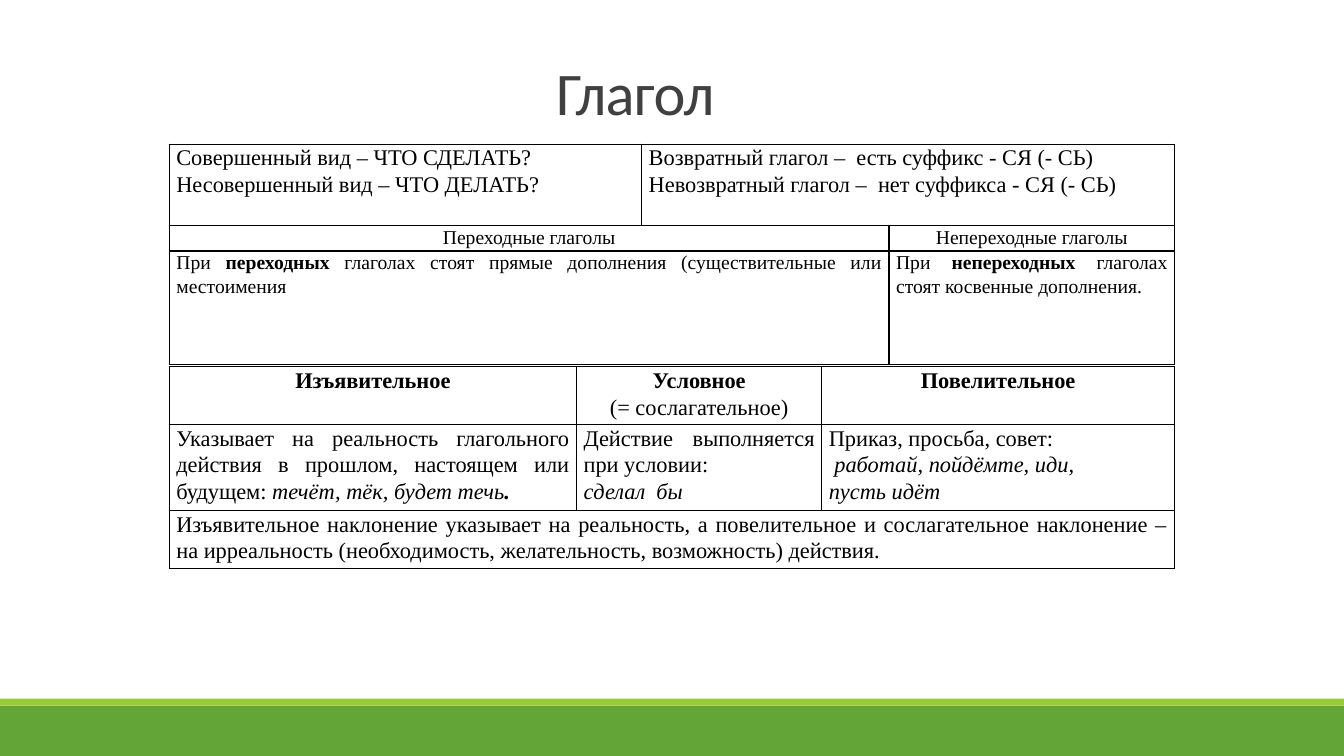
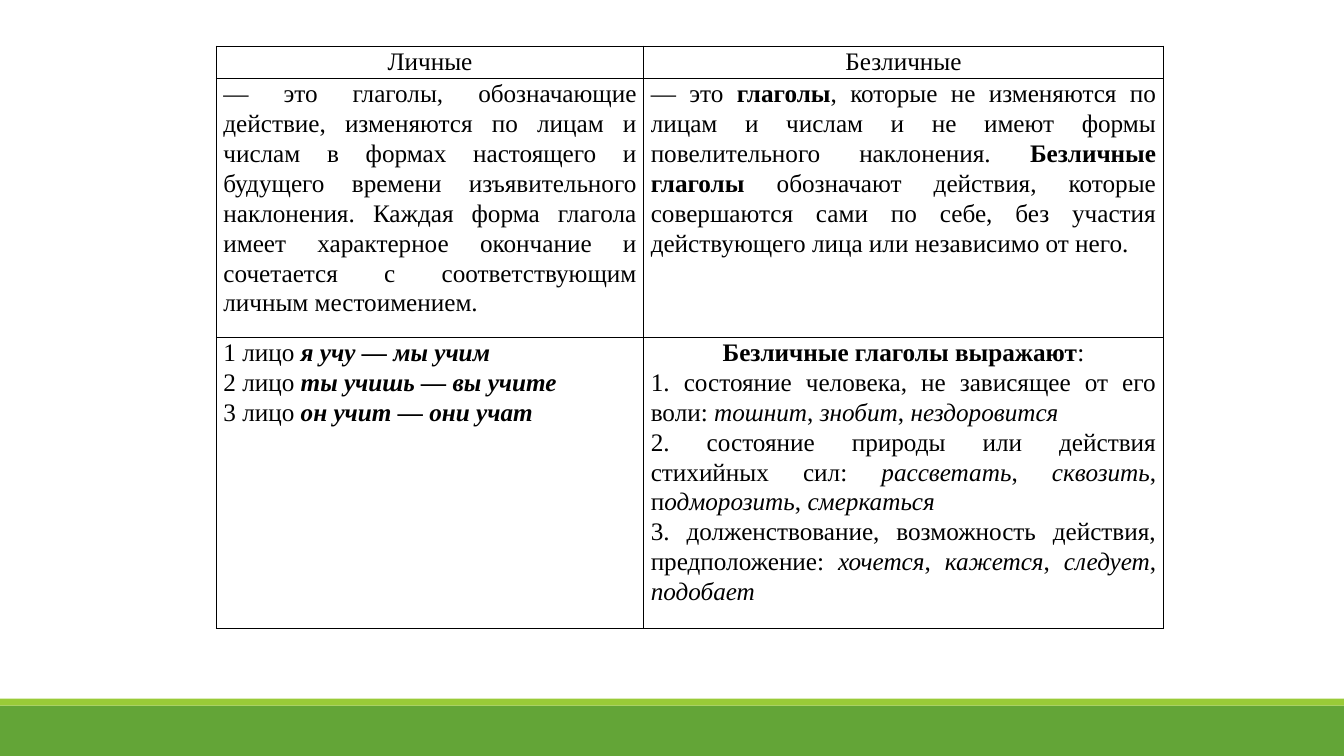
from lxml import etree
from pptx import Presentation
from pptx.dml.color import RGBColor
from pptx.enum.shapes import MSO_SHAPE
from pptx.enum.text import MSO_ANCHOR, PP_ALIGN
from pptx.oxml.ns import qn
from pptx.util import Emu, Inches, Pt

RECTANGLE = MSO_SHAPE.RECTANGLE
CENTER, JUSTIFY = PP_ALIGN.CENTER, PP_ALIGN.JUSTIFY
BOTTOM = MSO_ANCHOR.BOTTOM

COLORS = {"band": "63A537", "stripe": "99CB38", "title": "404040", "ink": "000000"}
TITLE_FONT, TABLE_FONT = "Calibri", "Times New Roman"
WIDTH, HEIGHT = Inches(13.333), Inches(7.5)
BLANK_LAYOUT = 6
LEFT = 12.6  # shared left edge of the tables on the first slide


# Lengths are percentages of the slide's width (across) or height (down)
def across(share):
    return Emu(round(WIDTH * share / 100))


def down(share):
    return Emu(round(HEIGHT * share / 100))


def color(name):
    return RGBColor.from_string(COLORS[name])


# Text: a cell is a list of paragraphs, a paragraph is an alignment and its runs
def bold(text):
    return text, "b"


def italic(text):
    return text, "i"


def bold_italic(text):
    return text, "bi"


def justified(*runs):
    return JUSTIFY, runs


def centered(*runs):
    return CENTER, runs


def listed(lead, *examples):
    """Justified paragraph: a plain lead, then italic examples with commas."""
    runs = [lead]
    for example in examples:
        runs += [italic(example), ", "]
    return justified(*runs[:-1])


def add_run(paragraph, text, font, size, ink, style=""):
    run = paragraph.add_run()
    run.text = text
    run.font.name, run.font.size = font, Pt(size)
    run.font.color.rgb = color(ink)
    run.font.bold, run.font.italic = "b" in style, "i" in style
    return run


def write_cell(cell, paragraphs, size):
    frame = cell.text_frame
    for number, (alignment, runs) in enumerate(paragraphs):
        paragraph = frame.add_paragraph() if number else frame.paragraphs[0]
        paragraph.alignment, paragraph.line_spacing = alignment, 1.07
        for run in runs:
            text, style = (run, "") if isinstance(run, str) else run
            add_run(paragraph, text, TABLE_FONT, size, "ink", style)


# Tables
def format_cell(cell):
    cell.margin_left = cell.margin_right = Inches(0.07)
    cell.margin_top = cell.margin_bottom = 0
    properties = cell._tc.get_or_add_tcPr()
    for side in ("lnL", "lnR", "lnT", "lnB"):
        border = etree.SubElement(properties, qn(f"a:{side}"), w=str(Pt(1)))
        fill = etree.SubElement(border, qn("a:solidFill"))
        etree.SubElement(fill, qn("a:srgbClr"), val=COLORS["ink"])
    cell.fill.background()


def add_grid(slide, left, top, columns, rows, size, content):
    """Add a bordered table; the last cell of a short row spans the rest."""
    table = slide.shapes.add_table(
        len(rows), len(columns), across(left), down(top),
        across(sum(columns)), down(sum(rows))).table
    table.first_row = table.horz_banding = False
    for column, share in zip(table.columns, columns):
        column.width = across(share)
    for row, share in zip(table.rows, rows):
        row.height = down(share)
    for cell in table.iter_cells():
        format_cell(cell)
    for r, row_content in enumerate(content):
        last = len(row_content) - 1
        if last < len(columns) - 1:
            table.cell(r, last).merge(table.cell(r, len(columns) - 1))
        for c, paragraphs in enumerate(row_content):
            write_cell(table.cell(r, c), paragraphs, size)


# Shared slide parts
def add_band(slide, top, height, fill):
    band = slide.shapes.add_shape(RECTANGLE, 0, down(top), WIDTH, down(height))
    band.shadow.inherit = False
    band.fill.solid()
    band.fill.fore_color.rgb = color(fill)
    band.line.fill.background()


def add_slide(deck):
    slide = deck.slides.add_slide(deck.slide_layouts[BLANK_LAYOUT])
    add_band(slide, 93.33, 6.67, "band")
    add_band(slide, 92.4, 0.93, "stripe")
    return slide


def add_title(slide, text):
    frame = slide.shapes.add_textbox(
        across(40.65), down(8.93), across(16.6), down(8.67)).text_frame
    frame.word_wrap, frame.vertical_anchor = True, BOTTOM
    paragraph = frame.paragraphs[0]
    paragraph.line_spacing = 0.85
    run = add_run(paragraph, text, TITLE_FONT, 43.2, "title")
    run._r.get_or_add_rPr().set("spc", "-50")


# Slides
def add_verb_slide(deck):
    slide = add_slide(deck)
    add_title(slide, "Глагол")

    # Aspect and reflexivity
    add_grid(slide, LEFT, 19.07, [35.15, 39.65], [10.8], 16, [
        [[justified("Совершенный вид – ЧТО СДЕЛАТЬ?"),
          justified("Несовершенный вид – ЧТО ДЕЛАТЬ?")],
         [justified("Возвратный глагол –  есть суффикс - СЯ (- СЬ)"),
          justified("Невозвратный глагол –  нет суффикса - СЯ (- СЬ)")]],
    ])

    # Transitivity
    add_grid(slide, LEFT, 29.87, [53.55, 21.25], [3.07, 15.07], 14, [
        [[centered("Переходные глаголы")], [centered("Непереходные глаголы")]],
        [[justified("При ", bold("переходных"),
                    " глаголах стоят прямые дополнения "
                    "(существительные или местоимения")],
         [justified("При ", bold("непереходных"),
                    " глаголах стоят косвенные дополнения.")]],
    ])

    # Mood
    add_grid(slide, LEFT, 48.53, [30.3, 18.25, 26.25], [7.07, 10.67, 7.07], 16, [
        [[centered(bold("Изъявительное"))],
         [centered(bold("Условное")), centered("(= сослагательное)")],
         [centered(bold("Повелительное"))]],
        [[justified("Указывает на реальность глагольного действия в прошлом, "
                    "настоящем или будущем: ",
                    italic("течёт, тёк, будет течь"), bold_italic("."))],
         [justified("Действие выполняется при условии:"),
          justified(italic("сделал  бы"))],
         [justified("Приказ, просьба, совет:"),
          justified(italic(" работай, пойдёмте, иди,")),
          justified(italic("пусть идёт"))]],
        [[justified("Изъявительное наклонение указывает на реальность, "
                    "а повелительное и сослагательное наклонение – на ирреальность "
                    "(необходимость, желательность, возможность) действия.")]],
    ])


def add_person_slide(deck):
    slide = add_slide(deck)
    persons = ["я учу — мы учим", "ты учишь — вы учите", "он учит — они учат"]

    # Personal and impersonal verbs
    add_grid(slide, 16.1, 6.1, [31.8, 38.65], [3.93, 31.73, 35.47], 18, [
        [[centered("Личные")], [centered("Безличные")]],
        [[justified("— это глаголы, обозначающие действие, изменяются по лицам и "
                    "числам в формах настоящего и будущего времени изъявительного "
                    "наклонения. Каждая форма глагола имеет характерное окончание "
                    "и сочетается с соответствующим личным местоимением.")],
         [justified("— это ", bold("глаголы"),
                    ", которые не изменяются по лицам и числам и не имеют формы "
                    "повелительного наклонения. ", bold("Безличные глаголы"),
                    " обозначают действия, которые совершаются сами по себе, "
                    "без участия действующего лица или независимо от него.")]],
        [[justified(f"{number} лицо ", bold_italic(forms))
          for number, forms in enumerate(persons, 1)],
         [centered(bold("Безличные глаголы выражают"), ":"),
          listed("1. состояние человека, не зависящее от его воли: ",
                 "тошнит", "знобит", "нездоровится"),
          justified("2. состояние природы или действия стихийных сил: ",
                    italic("рассветать"), ", ", italic("сквозить"), ", п",
                    italic("одморозить"), ", ", italic("смеркаться")),
          listed("3. долженствование, возможность действия, предположение: ",
                 "хочется", "кажется", "следует", "подобает")]],
    ])


def main():
    deck = Presentation()
    deck.slide_width, deck.slide_height = WIDTH, HEIGHT
    add_verb_slide(deck)
    add_person_slide(deck)
    deck.save("out.pptx")


if __name__ == "__main__":
    main()
